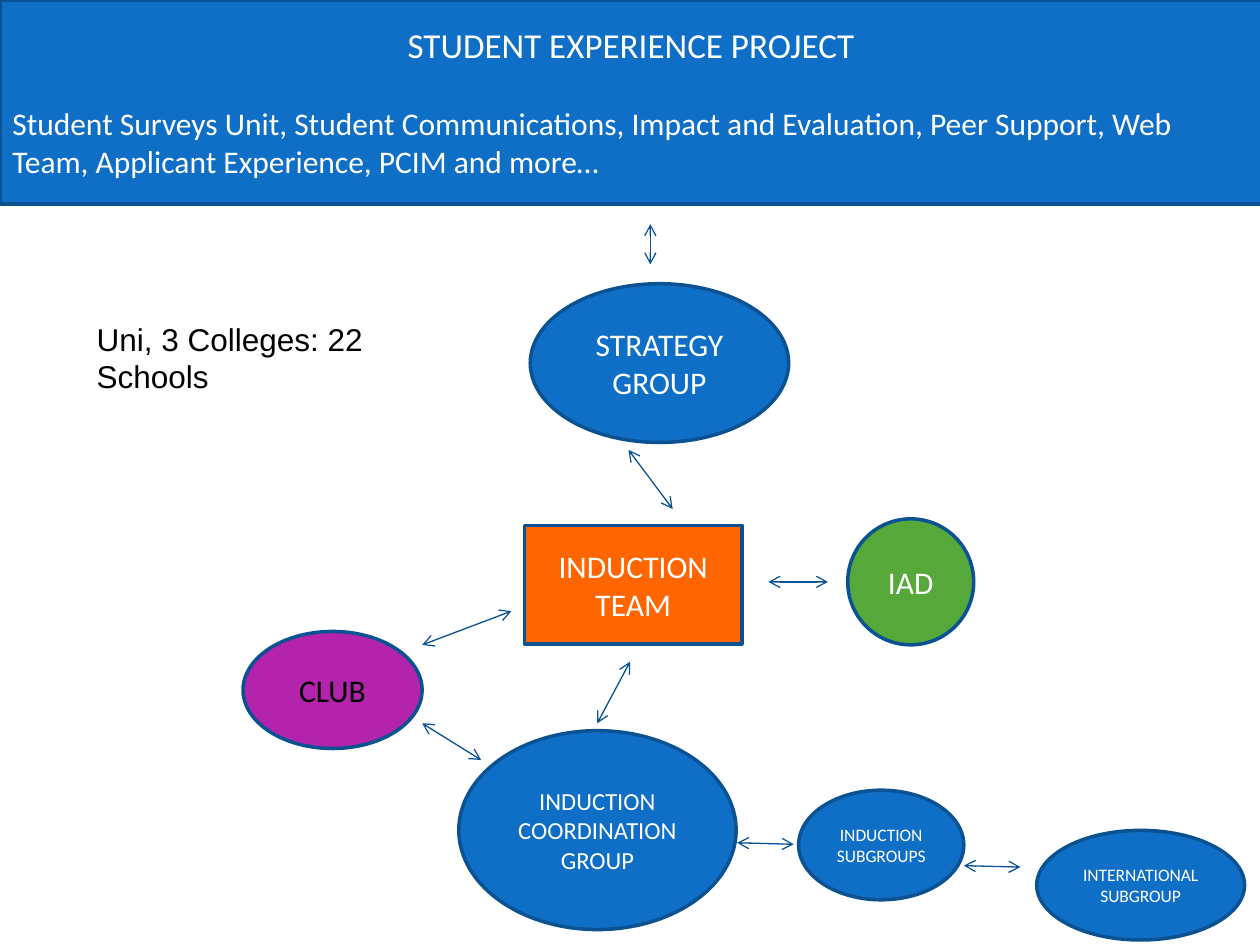
from lxml import etree
from pptx import Presentation
from pptx.dml.color import RGBColor
from pptx.enum import shapes, text
from pptx.oxml import ns
from pptx.util import Cm, Pt

BLUE = RGBColor(0x0F, 0x6F, 0xC6)
ORANGE = RGBColor(0xFF, 0x66, 0x00)
GREEN = RGBColor(0x55, 0xA8, 0x39)
PURPLE = RGBColor(0xB3, 0x23, 0xAC)
OUTLINE = RGBColor(0x0B, 0x52, 0x92)
ARROW = RGBColor(0x09, 0x52, 0x95)
WHITE = RGBColor(0xFF, 0xFF, 0xFF)
BLACK = RGBColor(0, 0, 0)

RECT = shapes.MSO_SHAPE.RECTANGLE
OVAL = shapes.MSO_SHAPE.OVAL
CENTER = text.PP_ALIGN.CENTER
LEFT = text.PP_ALIGN.LEFT

TITLE = "STUDENT EXPERIENCE PROJECT"
TEAMS = ("Student Surveys Unit, Student Communications, Impact and Evaluation, "
         "Peer Support, Web Team, Applicant Experience, PCIM and more…")
COLLEGES = "Uni, 3 Colleges: 22 Schools"

HEADER_BOX = (0, 0, 25.45, 4.11)
COLLEGES_BOX = (1.7, 6.32, 5.99, 1.78)

GROUPS = [
    ("INDUCTION TEAM", RECT, (10.57, 10.59, 4.39, 2.39), ORANGE, WHITE, 18),
    ("STRATEGY GROUP", OVAL, (10.69, 5.72, 5.21, 3.2), BLUE, WHITE, 18),
    ("INDUCTION COORDINATION GROUP", OVAL, (9.25, 14.73, 5.59, 4.01), BLUE, WHITE, 14),
    ("IAD", OVAL, (17.09, 10.46, 2.54, 2.54), GREEN, WHITE, 18),
    ("CLUB", OVAL, (4.9, 12.73, 3.61, 2.36), PURPLE, BLACK, 18),
    ("INTERNATIONAL SUBGROUP", OVAL, (20.9, 16.74, 4.19, 2.21), BLUE, WHITE, 10),
    ("INDUCTION SUBGROUPS", OVAL, (16.1, 15.93, 3.33, 2.21), BLUE, WHITE, 10),
]

LINKS = [
    (12.04, 14.58, 12.7, 13.34),
    (12.67, 9.07, 13.56, 10.26),
    (15.49, 11.73, 16.69, 11.73),
    (8.51, 14.58, 9.7, 15.32),
    (8.51, 13, 10.31, 12.32),
    (14.86, 16.99, 16, 17.02),
    (19.43, 17.45, 20.57, 17.48),
    (13.11, 4.52, 13.11, 5.33),
]


def lengths(values):
    return [Cm(value) for value in values]


def write(paragraph, words, size, color, font="Calibri", **layout):
    for key, value in layout.items():
        setattr(paragraph, key, value)
    run = paragraph.add_run()
    run.text = words
    for key, value in {"name": font, "size": Pt(size)}.items():
        setattr(run.font, key, value)
    run.font.color.rgb = color


def add_group(slide, outline, box, fill):
    group = slide.shapes.add_shape(outline, *lengths(box))
    group.shadow.inherit = False
    group.fill.solid()
    group.fill.fore_color.rgb = fill
    group.line.color.rgb = OUTLINE
    group.line.width = Pt(2)
    frame = group.text_frame
    frame.word_wrap = True
    frame.vertical_anchor = text.MSO_ANCHOR.MIDDLE
    return frame


def add_link(slide, ends):
    link = slide.shapes.add_connector(shapes.MSO_CONNECTOR.STRAIGHT, *lengths(ends))
    link.line.color.rgb = ARROW
    link.line.width = Pt(0.75)
    stroke = link.line._get_or_add_ln()
    for end in ("a:headEnd", "a:tailEnd"):
        etree.SubElement(stroke, ns.qn(end), type="arrow")
    etree.SubElement(link._element.spPr, ns.qn("a:effectLst"))


def main():
    deck = Presentation()
    deck.slide_width, deck.slide_height = lengths((25.4, 19.05))
    slide = deck.slides.add_slide(deck.slide_layouts[6])

    for name, outline, box, fill, color, size in GROUPS:
        frame = add_group(slide, outline, box, fill)
        write(frame.paragraphs[0], name, size, color, alignment=CENTER)

    header = add_group(slide, RECT, HEADER_BOX, BLUE)
    write(header.paragraphs[0], TITLE, 20, WHITE, alignment=CENTER)
    write(header.add_paragraph(), TEAMS, 18, WHITE, alignment=LEFT, space_before=Pt(22))

    for ends in LINKS:
        add_link(slide, ends)

    colleges = slide.shapes.add_textbox(*lengths(COLLEGES_BOX)).text_frame
    colleges.word_wrap = True
    write(colleges.paragraphs[0], COLLEGES, 18, BLACK, font="Arial")

    deck.save("out.pptx")


if __name__ == "__main__":
    main()
